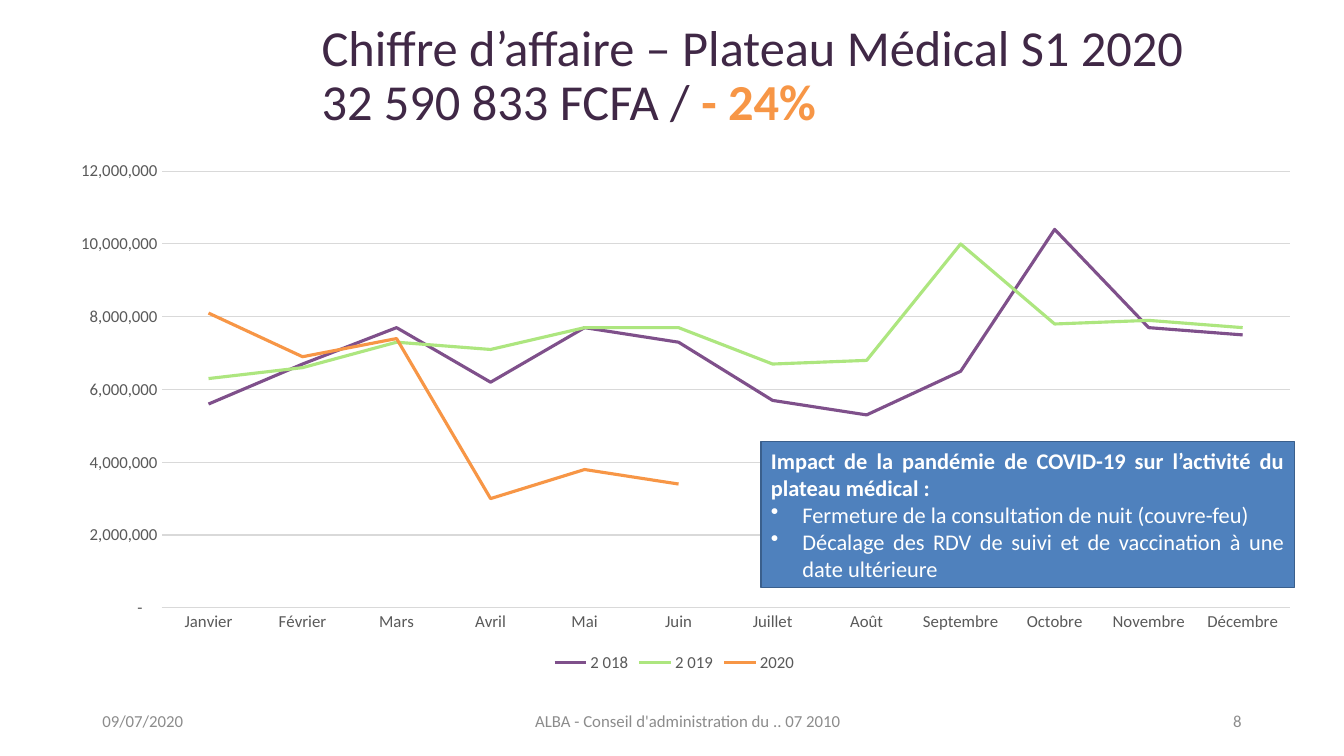
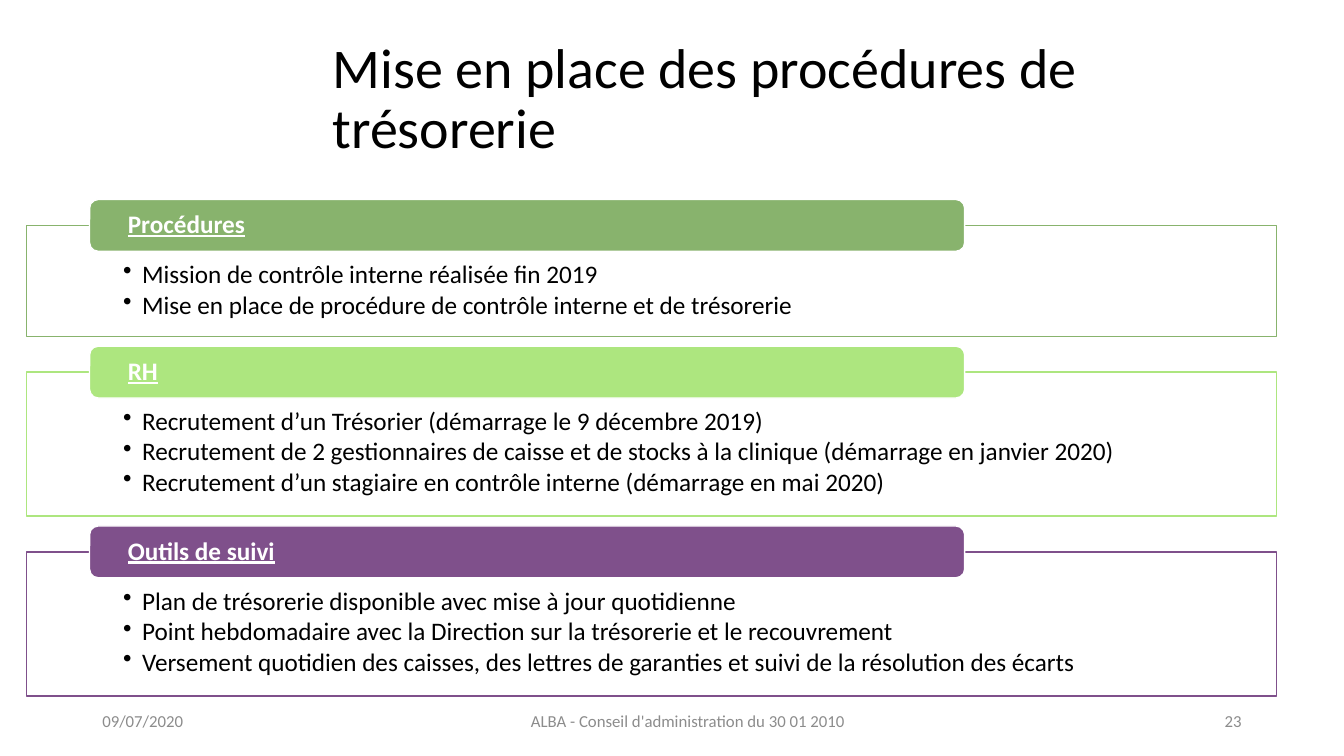
from dataclasses import dataclass

from pptx import Presentation
from pptx.chart.data import CategoryChartData
from pptx.dml.color import RGBColor
from pptx.enum.chart import XL_CHART_TYPE, XL_LEGEND_POSITION, XL_MARKER_STYLE, XL_TICK_MARK
from pptx.enum.shapes import MSO_SHAPE
from pptx.enum.text import MSO_ANCHOR, MSO_AUTO_SIZE, PP_ALIGN
from pptx.oxml import parse_xml
from pptx.oxml.ns import nsdecls
from pptx.util import Pt

LEFT, CENTER, RIGHT, JUSTIFY = PP_ALIGN.LEFT, PP_ALIGN.CENTER, PP_ALIGN.RIGHT, PP_ALIGN.JUSTIFY
MIDDLE, TOP = MSO_ANCHOR.MIDDLE, MSO_ANCHOR.TOP
RECTANGLE, ROUNDED = MSO_SHAPE.RECTANGLE, MSO_SHAPE.ROUNDED_RECTANGLE
NO_TICK = XL_TICK_MARK.NONE
TITLE_ONLY = 5


@dataclass(frozen=True)
class Theme:
    font: str = "Calibri"
    white: str = "FFFFFF"
    black: str = "000000"
    plum: str = "402846"
    purple: str = "7F508B"
    lime: str = "ADE67F"
    green: str = "88B36D"
    orange: str = "F79646"
    blue: str = "4F81BD"
    blue_edge: str = "3A5F8C"
    footer_gray: str = "8C8C8C"
    axis_gray: str = "595959"
    grid_gray: str = "D9D9D9"
    small: int = 12
    callout: int = 16
    body: int = 18
    title_small: int = 36
    title_large: int = 40


THEME = Theme()
DATE = "09/07/2020"

MONTHS = ["Janvier", "Février", "Mars", "Avril", "Mai", "Juin", "Juillet",
          "Août", "Septembre", "Octobre", "Novembre", "Décembre"]
# Name, colour, monthly turnover in millions
TURNOVER = [
    ("2 018", THEME.purple, [5.6, 6.7, 7.7, 6.2, 7.7, 7.3, 5.7, 5.3, 6.5, 10.4, 7.7, 7.5]),
    ("2 019", THEME.lime, [6.3, 6.6, 7.3, 7.1, 7.7, 7.7, 6.7, 6.8, 10, 7.8, 7.9, 7.7]),
    ("2020", THEME.orange, [8.1, 6.9, 7.4, 3, 3.8, 3.4] + [None] * 6),
]

# Heading, colour, body height, bullets
SECTIONS = [
    ("Procédures", THEME.green, 79.3, [
        "Mission de contrôle interne réalisée fin 2019",
        "Mise en place de procédure de contrôle interne et de trésorerie"]),
    ("RH", THEME.lime, 102.9, [
        "Recrutement d’un Trésorier (démarrage le 9 décembre 2019)",
        "Recrutement de 2 gestionnaires de caisse et de stocks à la clinique (démarrage en janvier 2020)",
        "Recrutement d’un stagiaire en contrôle interne (démarrage en mai 2020)"]),
    ("Outils de suivi", THEME.purple, 102.9, [
        "Plan de trésorerie disponible avec mise à jour quotidienne",
        "Point hebdomadaire avec la Direction sur la trésorerie et le recouvrement",
        "Versement quotidien des caisses, des lettres de garanties et suivi de la résolution des écarts"]),
]


def color(code):
    return RGBColor.from_string(code)


def style_font(font, size, code, bold=False, underline=False):
    font.name, font.size, font.bold, font.underline = THEME.font, Pt(size), bold, underline
    font.color.rgb = color(code)


def set_frame(frame, margins, anchor):
    frame.word_wrap = True
    frame.auto_size = MSO_AUTO_SIZE.NONE
    frame.vertical_anchor = anchor
    frame.margin_left, frame.margin_top, frame.margin_right, frame.margin_bottom = map(Pt, margins)


def add_bullet(para, indent):
    properties = para._p.get_or_add_pPr()
    properties.set("marL", str(Pt(indent)))
    properties.set("indent", str(-Pt(indent)))
    properties.append(parse_xml(f'<a:buChar {nsdecls("a")} char="•"/>'))


def add_panel(page, kind, box, fill, line):
    panel = page.shapes.add_shape(kind, *map(Pt, box))
    panel.shadow.inherit = False
    panel.fill.solid()
    panel.fill.fore_color.rgb = color(fill)
    panel.line.color.rgb = color(line)
    panel.line.width = Pt(1)
    return panel


def add_title(page, box, text, size, code):
    title = page.shapes.title
    title.left, title.top, title.width, title.height = map(Pt, box)
    frame = title.text_frame
    set_frame(frame, (7.2, 3.6, 7.2, 3.6), MIDDLE)
    frame.text = text
    para = frame.paragraphs[0]
    para.alignment, para.line_spacing = LEFT, 0.9
    for span in para.runs:
        style_font(span.font, size, code)
    return para


def add_footer(page, note, number):
    for left, width, text, alignment in [(66, 216, DATE, LEFT),
                                         (338.4, 306, note, CENTER),
                                         (678, 216, number, RIGHT)]:
        box = page.shapes.add_textbox(Pt(left), Pt(500.4), Pt(width), Pt(28.8))
        set_frame(box.text_frame, (7.2, 3.6, 7.2, 3.6), MIDDLE)
        box.text_frame.text = text
        para = box.text_frame.paragraphs[0]
        para.alignment = alignment
        style_font(para.runs[0].font, THEME.small, THEME.footer_gray)


def add_turnover_chart(page, box):
    data = CategoryChartData()
    data.categories = MONTHS
    for name, _, millions in TURNOVER:
        data.add_series(name, [None if v is None else round(v * 1_000_000) for v in millions])
    chart = page.shapes.add_chart(XL_CHART_TYPE.LINE, *map(Pt, box), data).chart
    chart.has_title = False
    style_font(chart.font, THEME.small, THEME.axis_gray)
    chart.has_legend = True
    chart.legend.position = XL_LEGEND_POSITION.BOTTOM
    chart.legend.include_in_layout = False
    style_font(chart.legend.font, THEME.small, THEME.axis_gray)

    # Lines
    plot = chart.plots[0]
    plot.vary_by_categories = False
    for series, (_, code, _) in zip(plot.series, TURNOVER):
        series.smooth = False
        series.marker.style = XL_MARKER_STYLE.NONE
        series.format.line.color.rgb = color(code)
        series.format.line.width = Pt(2.25)

    # Axes and grid
    months, amounts = chart.category_axis, chart.value_axis
    amounts.minimum_scale, amounts.maximum_scale, amounts.major_unit = 0, 12_000_000, 2_000_000
    amounts.has_major_gridlines = True
    for line in (months.format.line, amounts.major_gridlines.format.line):
        line.color.rgb = color(THEME.grid_gray)
        line.width = Pt(0.75)
    amounts.format.line.fill.background()
    for axis in (months, amounts):
        axis.major_tick_mark = axis.minor_tick_mark = NO_TICK
        style_font(axis.tick_labels.font, THEME.small, THEME.axis_gray)
    amounts.tick_labels.number_format = '#,##0;-#,##0;"-"_0_0'
    amounts.tick_labels.number_format_is_linked = False

    # Plot area as shares of the chart
    area = chart._chartSpace.chart.plotArea
    for layout in area.findall("c:layout", area.nsmap):
        area.remove(layout)
    shares = "".join(f'<c:{tag} val="{share}"/>' for tag, share in
                     [("x", 0.1), ("y", 0.04), ("w", 0.88), ("h", 0.83)])
    area.insert(0, parse_xml(
        f'<c:layout {nsdecls("c")}><c:manualLayout><c:layoutTarget val="inner"/>'
        f'<c:xMode val="edge"/><c:yMode val="edge"/>{shares}</c:manualLayout></c:layout>'))


def add_callout(page, box, heading, points):
    panel = add_panel(page, RECTANGLE, box, THEME.blue, THEME.blue_edge)
    frame = panel.text_frame
    set_frame(frame, (7.2, 3.6, 7.2, 3.6), MIDDLE)
    frame.text = "\n".join([heading, *points])
    for index, para in enumerate(frame.paragraphs):
        if index:
            add_bullet(para, 22.5)
        para.alignment = JUSTIFY
        style_font(para.runs[0].font, THEME.callout, THEME.white, bold=index == 0)


def add_section(page, box, tab_height, heading, code, points):
    left, top, width, height = box
    # Outlined body with its bullets
    body = add_panel(page, RECTANGLE, box, THEME.white, code)
    set_frame(body.text_frame, (69, 26, 69, 10), TOP)
    body.text_frame.text = "\n".join(points)
    for para in body.text_frame.paragraphs:
        add_bullet(para, 13.5)
        para.alignment, para.line_spacing, para.space_after = LEFT, 0.9, Pt(2.5)
        style_font(para.runs[0].font, THEME.body, THEME.black)

    # Heading tab centred on the top edge
    tab_box = (left + 45, top - tab_height / 2, width * 0.7, tab_height)
    tab = add_panel(page, ROUNDED, tab_box, code, THEME.white)
    set_frame(tab.text_frame, (25.5, 0, 25.5, 0), MIDDLE)
    tab.text_frame.text = heading
    para = tab.text_frame.paragraphs[0]
    para.alignment, para.line_spacing = LEFT, 0.9
    style_font(para.runs[0].font, THEME.body, THEME.white, bold=True, underline=True)


def add_sections(page, left, top, width, tab_height=37, gap=7):
    for heading, code, height, points in SECTIONS:
        add_section(page, (left, top, width, height), tab_height, heading, code, points)
        top += height + gap + tab_height / 2


def build_turnover_page(deck):
    page = deck.slides.add_slide(deck.slide_layouts[TITLE_ONLY])
    para = add_title(page, (222.5, 10.8, 681, 88.6),
                     "Chiffre d’affaire – Plateau Médical S1 2020\v32 590 833 FCFA / ",
                     THEME.title_small, THEME.plum)
    change = para.add_run()
    change.text = "- 24%"
    style_font(change.font, THEME.title_small, THEME.orange, bold=True)
    add_footer(page, "ALBA - Conseil d'administration du .. 07 2010", "8")
    add_turnover_chart(page, (23.8, 107.3, 915.8, 375.8))
    add_callout(page, (543.6, 315.4, 380.9, 104.4),
                "Impact de la pandémie de COVID-19 sur l’activité du plateau médical :",
                ["Fermeture de la consultation de nuit (couvre-feu)",
                 "Décalage des RDV de suivi et de vaccination à une date ultérieure"])


def build_procedures_page(deck):
    page = deck.slides.add_slide(deck.slide_layouts[TITLE_ONLY])
    add_title(page, (230.4, 15.1, 681, 113), "Mise en place des procédures de trésorerie",
              THEME.title_large, THEME.black)
    add_sections(page, 19, 161, 893)
    add_footer(page, "ALBA - Conseil d'administration du 30 01 2010", "23")


def main():
    deck = Presentation()
    deck.slide_width, deck.slide_height = Pt(960), Pt(540)
    build_turnover_page(deck)
    build_procedures_page(deck)
    deck.save("out.pptx")


if __name__ == "__main__":
    main()
